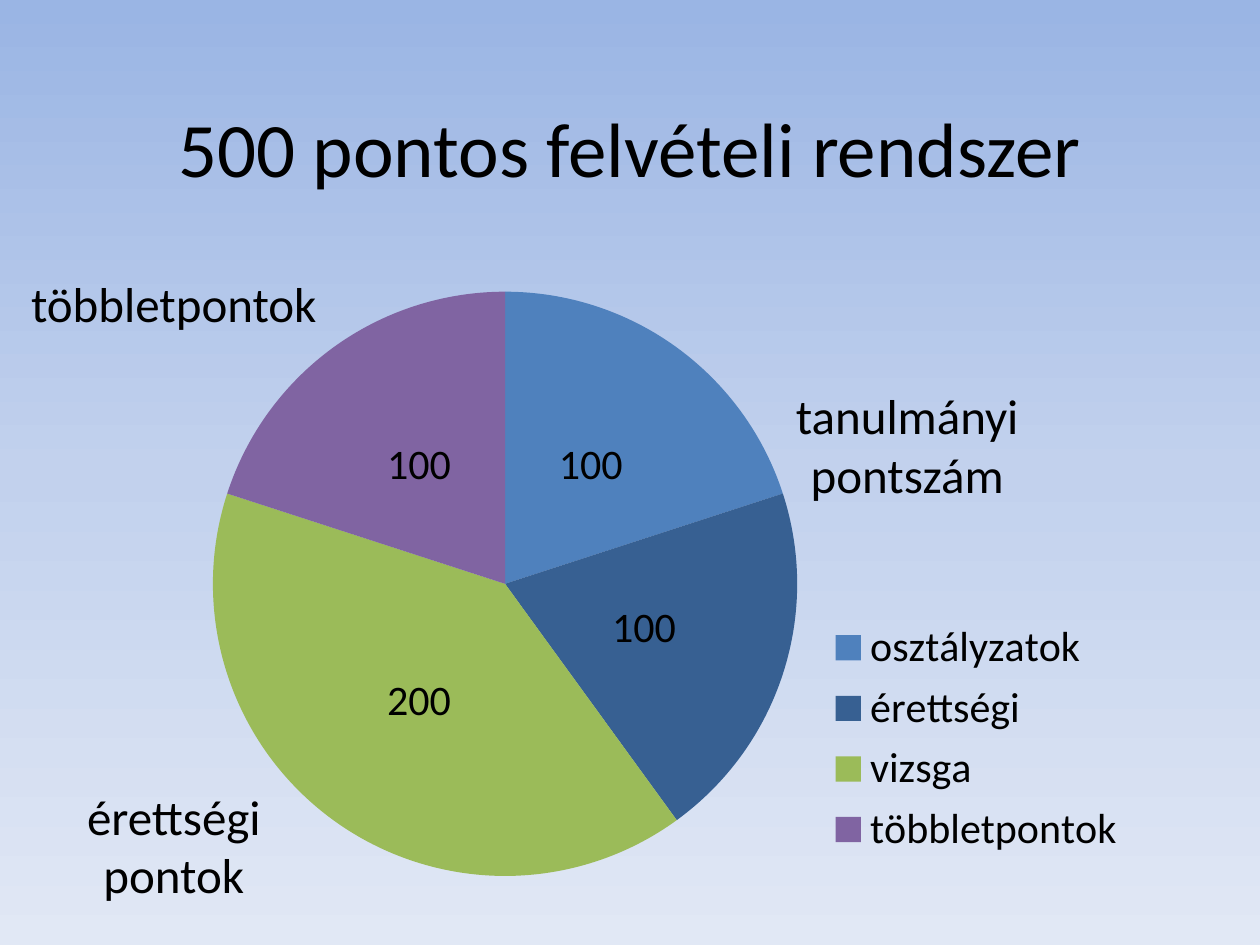
from copy import deepcopy

from lxml import etree
from pptx import Presentation
from pptx.chart.data import CategoryChartData
from pptx.dml.color import RGBColor
from pptx.enum.chart import XL_CHART_TYPE, XL_LABEL_POSITION, XL_LEGEND_POSITION
from pptx.enum.text import MSO_ANCHOR, MSO_AUTO_SIZE, PP_ALIGN
from pptx.oxml.ns import qn
from pptx.util import Inches, Pt

PIE = XL_CHART_TYPE.PIE
LABEL_CENTER = XL_LABEL_POSITION.CENTER
LEGEND_RIGHT = XL_LEGEND_POSITION.RIGHT
CENTER = PP_ALIGN.CENTER
MIDDLE = MSO_ANCHOR.MIDDLE
GROW = MSO_AUTO_SIZE.SHAPE_TO_FIT_TEXT

FONT = "Calibri"
BLACK = RGBColor(0x00, 0x00, 0x00)
BLUE = RGBColor(0x4F, 0x81, 0xBD)
DARK_BLUE = RGBColor(0x37, 0x60, 0x92)
GREEN = RGBColor(0x9B, 0xBB, 0x59)
PURPLE = RGBColor(0x80, 0x64, 0xA2)
SKY = [
    (0, RGBColor(0x9A, 0xB5, 0xE4)),
    (0.5, RGBColor(0xC2, 0xD1, 0xED)),
    (1, RGBColor(0xE1, 0xE8, 0xF5)),
]

SLICES = [
    ("osztályzatok", 100, BLUE),
    ("érettségi", 100, DARK_BLUE),
    ("vizsga", 200, GREEN),
    ("többletpontok", 100, PURPLE),
]
CAPTIONS = [
    ("tanulmányi pontszám", 6.02, 3.01, 2.36, 1.04),
    ("érettségi pontok", 0.2, 6.19, 2.36, 1.04),
    ("többletpontok", 0.08, 2.12, 2.6, 0.57),
]


def format_font(font, size, color=BLACK):
    font.name, font.size = FONT, Pt(size)
    font.color.rgb = color


def write(tf, text, size=28, color=BLACK, align=CENTER):
    p = tf.paragraphs[0]
    p.alignment = align
    r = p.add_run()
    r.text = text
    format_font(r.font, size, color)


def place(element, x, y, w, h, inner=False):
    """Give a chart part a manual layout, in fractions of the chart."""
    for old in element.findall(qn("c:layout")):
        element.remove(old)
    layout = etree.Element(qn("c:layout"))
    manual = etree.SubElement(layout, qn("c:manualLayout"))
    values = [("xMode", "edge"), ("yMode", "edge"), ("x", x), ("y", y), ("w", w), ("h", h)]
    if inner:
        values.insert(0, ("layoutTarget", "inner"))
    for tag, value in values:
        etree.SubElement(manual, qn("c:" + tag)).set("val", str(value))
    element.insert(0 if inner else 1, layout)


class Deck:
    def __init__(self, width, height):
        self.prs = Presentation()
        self.prs.slide_width, self.prs.slide_height = Inches(width), Inches(height)
        self.s = self.prs.slides.add_slide(self.prs.slide_layouts[5])

    def background(self, stops):
        fill = self.s.background.fill
        fill.gradient()
        fill.gradient_angle = 270
        gs_list = self.s.element.find(".//" + qn("a:gsLst"))
        while len(gs_list) < len(stops):
            gs_list.append(deepcopy(gs_list[0]))
        for stop, (position, color) in zip(fill.gradient_stops, stops):
            stop.position = position
            stop.color.rgb = color

    def title(self, text, x, y, w, h):
        sp = self.s.shapes.title
        sp.left, sp.top, sp.width, sp.height = map(Inches, (x, y, w, h))
        sp.text_frame.vertical_anchor = MIDDLE
        write(sp.text_frame, text, size=44)

    def caption(self, text, x, y, w, h):
        tf = self.s.shapes.add_textbox(*map(Inches, (x, y, w, h))).text_frame
        tf.word_wrap = True
        tf.auto_size = GROW
        write(tf, text)

    def pie(self, slices, x, y, w, h):
        data = CategoryChartData()
        data.categories = [name for name, _, _ in slices]
        data.add_series("Series 1", [value for _, value, _ in slices])
        chart = self.s.shapes.add_chart(PIE, *map(Inches, (x, y, w, h)), data).chart
        format_font(chart.font, 10)
        chart.has_title = False

        # Slices and their values
        plot = chart.plots[0]
        plot.vary_by_categories = True
        for i, (_, _, color) in enumerate(slices):
            fill = plot.series[0].points[i].format.fill
            fill.solid()
            fill.fore_color.rgb = color
        plot.has_data_labels = True
        labels = plot.data_labels
        labels.show_value = True
        labels.show_percentage = False
        labels.position = LABEL_CENTER
        format_font(labels.font, 24)

        # Legend at lower right, beside the pie
        chart.has_legend = True
        legend = chart.legend
        legend.position = LEGEND_RIGHT
        legend.include_in_layout = False
        format_font(legend.font, 24)
        area = chart.element.find(".//" + qn("c:plotArea"))
        place(area, 0.02, 0.04, 0.62, 0.91, inner=True)
        place(chart.element.find(".//" + qn("c:legend")), 0.67, 0.54, 0.32, 0.39)


def main():
    deck = Deck(10, 7.5)
    deck.background(SKY)
    deck.title("500 pontos felvételi rendszer", 0.75, 0.36, 8.5, 1.61)
    deck.pie(SLICES, 1.54, 2.1, 7.48, 5.12)
    for caption in CAPTIONS:
        deck.caption(*caption)
    deck.prs.save("out.pptx")


if __name__ == "__main__":
    main()
